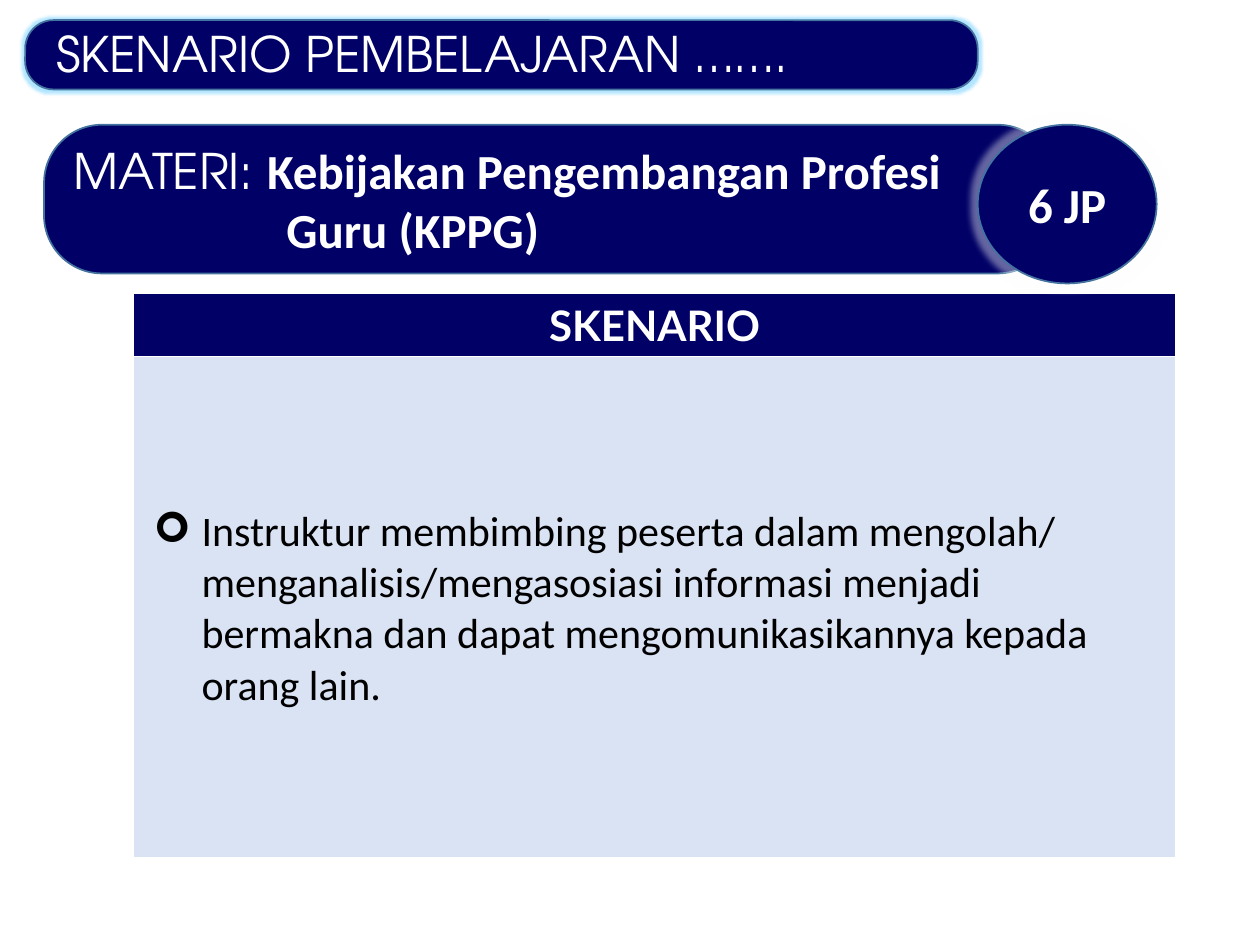
from lxml.etree import SubElement
from pptx import Presentation
from pptx.dml.color import RGBColor as RGB
from pptx.enum.shapes import MSO_SHAPE as SHAPE
from pptx.enum.text import MSO_ANCHOR as ANCHOR, PP_ALIGN as ALIGN
from pptx.oxml.ns import qn
from pptx.util import Inches, Pt

COLORS = {
    "navy": "000066",
    "edge": "43739E",
    "pale": "DAE3F3",
    "white": "FFFFFF",
    "black": "000000",
    "sky": "66CCFF",
}
COLS, ROWS = 100, 75

prs = Presentation()
prs.slide_width, prs.slide_height = Inches(10), Inches(7.5)
cw, rh = prs.slide_width / COLS, prs.slide_height / ROWS
s = prs.slides.add_slide(prs.slide_layouts[6])


def grid(x, y, w, h):
    return int(x * cw), int(y * rh), int(w * cw), int(h * rh)


def write(p, text, size=28, font="Calibri", color="white", bold=False,
          align=ALIGN.LEFT, indent=None, bullet=None):
    p.alignment = align
    if indent:
        pPr = p._p.get_or_add_pPr()
        pPr.set("marL", str(int(indent[0] * cw)))
        pPr.set("indent", str(int(indent[1] * cw)))
        if bullet:
            SubElement(pPr, qn("a:buFont")).set("typeface", "Wingdings")
            SubElement(pPr, qn("a:buChar")).set("char", bullet)
    r = p.add_run()
    r.text = text
    r.font.size, r.font.name, r.font.bold = Pt(size), font, bold
    r.font.color.rgb = RGB.from_string(COLORS[color])


table = s.shapes.add_table(2, 1, *grid(10.6, 23.3, 82.7, 44.8)).table
table.horz_banding = False
for row, height, fill in zip(table.rows, (5, 39.8), ("navy", "pale")):
    row.height = int(height * rh)
    cell = row.cells[0]
    cell.fill.solid()
    cell.fill.fore_color.rgb = RGB.from_string(COLORS[fill])
head, body = table.cell(0, 0), table.cell(1, 0)
write(head.text_frame.paragraphs[0], "SKENARIO", size=24, font="Lato",
      bold=True, align=ALIGN.CENTER)
body.margin_top = int(11.9 * rh)
write(body.text_frame.paragraphs[0],
      "Instruktur membimbing peserta dalam mengolah/ "
      "menganalisis/mengasosiasi informasi menjadi bermakna "
      "dan dapat mengomunikasikannya kepada orang lain.",
      size=24, color="black", indent=(4.4, -3.8), bullet="➢")

frames = []
for kind, box, adj, glow in (
    (SHAPE.ROUNDED_RECTANGLE, (2, 1.6, 75.6, 5.5), 0.41, ("sky", 0.5, 50)),
    (SHAPE.ROUNDED_RECTANGLE, (3.5, 9.9, 80.3, 11.8), 0.39, None),
    (SHAPE.OVAL, (77.6, 9.9, 14.2, 12.6), None, ("white", 1, 40)),
):
    sp = s.shapes.add_shape(kind, *grid(*box))
    sp.shadow.inherit = False
    sp.fill.solid()
    sp.fill.fore_color.rgb = RGB.from_string(COLORS["navy"])
    sp.line.color.rgb = RGB.from_string(COLORS["edge"])
    sp.line.width = Pt(1)
    if adj:
        sp.adjustments[0] = adj
    if glow:
        color, radius, alpha = glow
        effects = sp._element.spPr.find(qn("a:effectLst"))
        node = SubElement(effects, qn("a:glow"), rad=str(int(radius * cw)))
        clr = SubElement(node, qn("a:srgbClr"), val=COLORS[color])
        SubElement(clr, qn("a:alpha"), val=str(alpha * 1000))
    tf = sp.text_frame
    tf.word_wrap, tf.vertical_anchor = True, ANCHOR.MIDDLE
    frames.append(tf)

tf = s.shapes.add_textbox(*grid(3.5, 1.4, 72.4, 5.7)).text_frame
tf.word_wrap = True
write(tf.paragraphs[0], "SKENARIO PEMBELAJARAN …….", font="TeX Gyre Adventor")

p = frames[1].paragraphs[0]
write(p, "MATERI: ", font="TeX Gyre Adventor", indent=(16.9, -16.9))
write(p, "Kebijakan Pengembangan Profesi Guru (KPPG)", bold=True)
write(frames[2].paragraphs[0], "6 JP", bold=True, align=ALIGN.CENTER)

prs.save("out.pptx")
